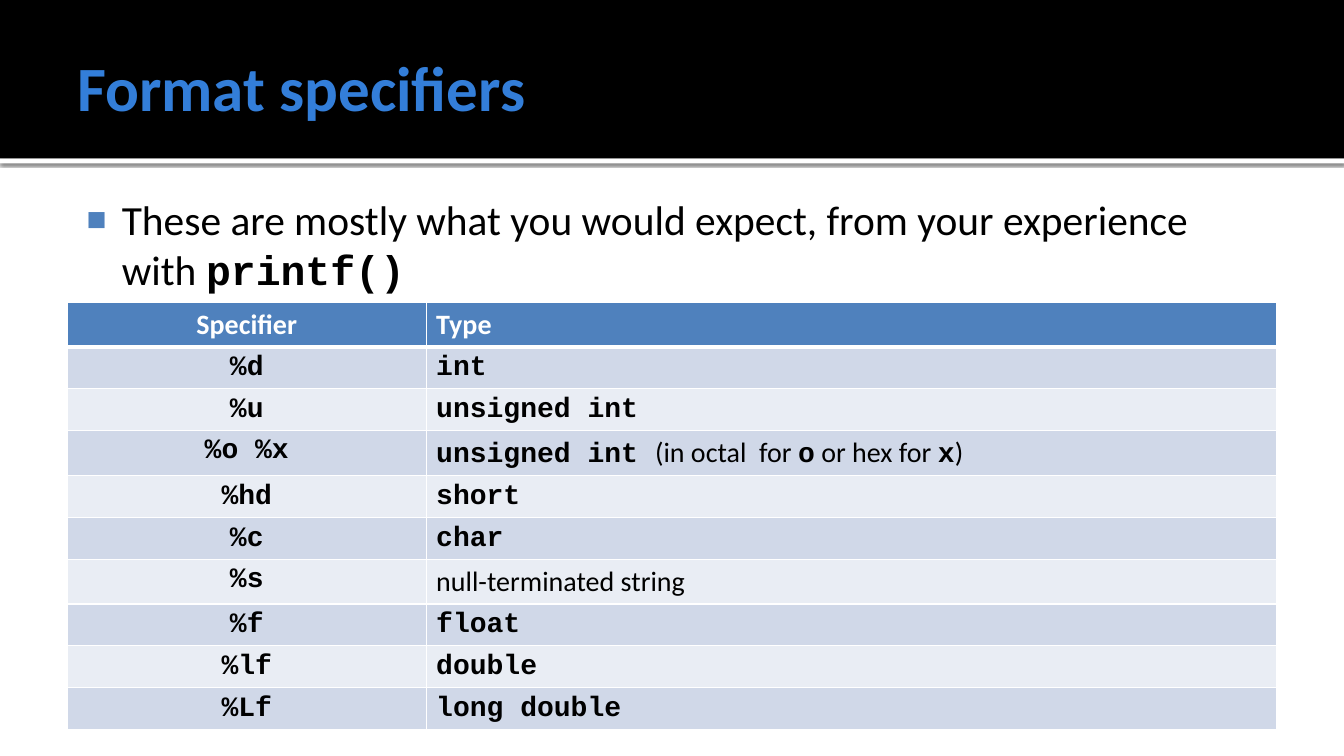
from lxml.etree import SubElement
from pptx import Presentation
from pptx.dml.color import RGBColor
from pptx.enum.shapes import MSO_SHAPE
from pptx.enum.text import MSO_ANCHOR, MSO_AUTO_SIZE, PP_ALIGN
from pptx.oxml import parse_xml
from pptx.oxml.ns import nsdecls, qn
from pptx.util import Cm, Pt

BLACK = RGBColor(0x00, 0x00, 0x00)
WHITE = RGBColor(0xFF, 0xFF, 0xFF)
TITLE_BLUE = RGBColor(0x33, 0x7E, 0xD9)
ACCENT_BLUE = RGBColor(0x4F, 0x81, 0xBD)
BAND_DARK = RGBColor(0xD0, 0xD8, 0xE8)
BAND_LIGHT = RGBColor(0xE9, 0xED, 0xF4)

PLAIN = "Calibri"
CODE = "Courier New"

SLIDE_WIDTH, SLIDE_HEIGHT = Cm(33.87), Cm(19.05)
LEFT, CONTENT_WIDTH = Cm(1.7), Cm(30.48)
HEADER_HEIGHT = Cm(3.99)
COLUMN_WIDTHS = [Cm(9.04), Cm(21.44)]
ROW_HEIGHT = Cm(1.04)

# Each specifier with the runs that describe its type
SPECIFIERS = [
    ("%d", [("int", CODE)]),
    ("%u", [("unsigned int", CODE)]),
    ("%o %x", [("unsigned int ", CODE), ("(in octal  for ", PLAIN), ("o", CODE),
               (" or hex for ", PLAIN), ("x", CODE), (")", PLAIN)]),
    ("%hd", [("short", CODE)]),
    ("%c", [("char", CODE)]),
    ("%s", [("null-terminated string", PLAIN)]),
    ("%f", [("float", CODE)]),
    ("%lf", [("double", CODE)]),
    ("%Lf", [("long double", CODE)]),
]


def write_runs(paragraph, runs, size, color, bold=None):
    """Write (text, font) runs; code is bold unless bold is given."""
    for text, font_name in runs:
        run = paragraph.add_run()
        run.text = text
        run.font.name = font_name
        run.font.size = Pt(size)
        run.font.color.rgb = color
        run.font.bold = font_name == CODE if bold is None else bold


def place(shape, top, height, margins):
    shape.left, shape.top, shape.width, shape.height = LEFT, top, CONTENT_WIDTH, height
    frame = shape.text_frame
    frame.word_wrap = True
    frame.auto_size = MSO_AUTO_SIZE.NONE
    frame.margin_left, frame.margin_top, frame.margin_right, frame.margin_bottom = margins
    return frame


def add_bar(slide, top, height, color):
    """Add a full-width bar behind the title."""
    bar = slide.shapes.add_shape(MSO_SHAPE.RECTANGLE, 0, top, SLIDE_WIDTH, height)
    bar.shadow.inherit = False
    bar.fill.solid()
    bar.fill.fore_color.rgb = color
    bar.line.fill.background()
    slide.shapes.title.element.addprevious(bar.element)
    return bar


def add_shadow(shape):
    effects = shape.element.spPr.find(qn("a:effectLst"))
    effects.append(parse_xml(
        f'<a:outerShdw {nsdecls("a")} blurRad="{Pt(2.5)}" dist="{Pt(0.8)}" dir="5400000">'
        '<a:srgbClr val="000000"><a:alpha val="60000"/></a:srgbClr></a:outerShdw>'))


def set_square_bullet(paragraph):
    properties = paragraph._p.get_or_add_pPr()
    properties.set("marL", str(Cm(1.22)))
    properties.set("indent", str(-Cm(0.89)))
    color = SubElement(properties, qn("a:buClr"))
    SubElement(color, qn("a:srgbClr"), val=str(ACCENT_BLUE))
    SubElement(properties, qn("a:buSzPct"), val="80000")
    SubElement(properties, qn("a:buFont"), typeface="Arial")
    SubElement(properties, qn("a:buChar"), char="■")


def set_borders(cell, top, bottom):
    """Draw white borders, with top and bottom widths in points."""
    properties = cell._tc.get_or_add_tcPr()
    widths = {"lnL": 1, "lnR": 1, "lnT": top, "lnB": bottom}
    for position, (side, width) in enumerate(widths.items()):
        properties.insert(position, parse_xml(
            f'<a:{side} {nsdecls("a")} w="{Pt(width)}"><a:solidFill>'
            f'<a:srgbClr val="{WHITE}"/></a:solidFill></a:{side}>'))


def fill_row(table, index, contents, fill, color, bold=None):
    for column, runs in enumerate(contents):
        cell = table.cell(index, column)
        cell.fill.solid()
        cell.fill.fore_color.rgb = fill
        set_borders(cell, top=3 if index == 1 else 1, bottom=3 if index == 0 else 1)
        paragraph = cell.text_frame.paragraphs[0]
        paragraph.alignment = PP_ALIGN.LEFT if column else PP_ALIGN.CENTER
        write_runs(paragraph, runs, 20, color, bold)


def add_specifier_table(slide):
    row_count = len(SPECIFIERS) + 1
    table = slide.shapes.add_table(row_count, 2, LEFT, Cm(7.62), CONTENT_WIDTH,
                                   ROW_HEIGHT * row_count).table
    table.horz_banding = False
    for column, width in zip(table.columns, COLUMN_WIDTHS):
        column.width = width
    for row in table.rows:
        row.height = ROW_HEIGHT
    headings = [[("Specifier", PLAIN)], [("Type", PLAIN)]]
    fill_row(table, 0, headings, ACCENT_BLUE, WHITE, bold=True)
    for index, (specifier, type_runs) in enumerate(SPECIFIERS, start=1):
        band = BAND_DARK if index % 2 else BAND_LIGHT
        fill_row(table, index, [[(specifier, CODE)], type_runs], band, BLACK)


def main():
    presentation = Presentation()
    presentation.slide_width, presentation.slide_height = SLIDE_WIDTH, SLIDE_HEIGHT
    slide = presentation.slides.add_slide(presentation.slide_layouts[1])

    # Header bars
    rule = add_bar(slide, HEADER_HEIGHT, Cm(0.13), WHITE)
    add_shadow(rule)
    add_bar(slide, 0, HEADER_HEIGHT, BLACK)

    # Title
    frame = place(slide.shapes.title, Cm(0.43), Cm(3.48),
                  (Cm(0.25), Cm(0.13), Cm(0.13), Cm(0.13)))
    frame.vertical_anchor = MSO_ANCHOR.MIDDLE
    heading = frame.paragraphs[0]
    heading.alignment = PP_ALIGN.LEFT
    write_runs(heading, [("Format specifiers", PLAIN)], 45, TITLE_BLUE, bold=True)

    # Introductory bullet
    frame = place(slide.placeholders[1], Cm(4.65), Cm(2.69),
                  (Cm(0.15), Cm(0.25), Cm(0.25), Cm(0.13)))
    frame.vertical_anchor = MSO_ANCHOR.TOP
    bullet = frame.paragraphs[0]
    bullet.space_before = Pt(0)
    set_square_bullet(bullet)
    write_runs(bullet, [
        ("These are mostly what you would expect, from your experience with ", PLAIN),
        ("printf()", CODE)], 29.6, BLACK)

    # Table of specifiers
    add_specifier_table(slide)

    presentation.save("out.pptx")


if __name__ == "__main__":
    main()
